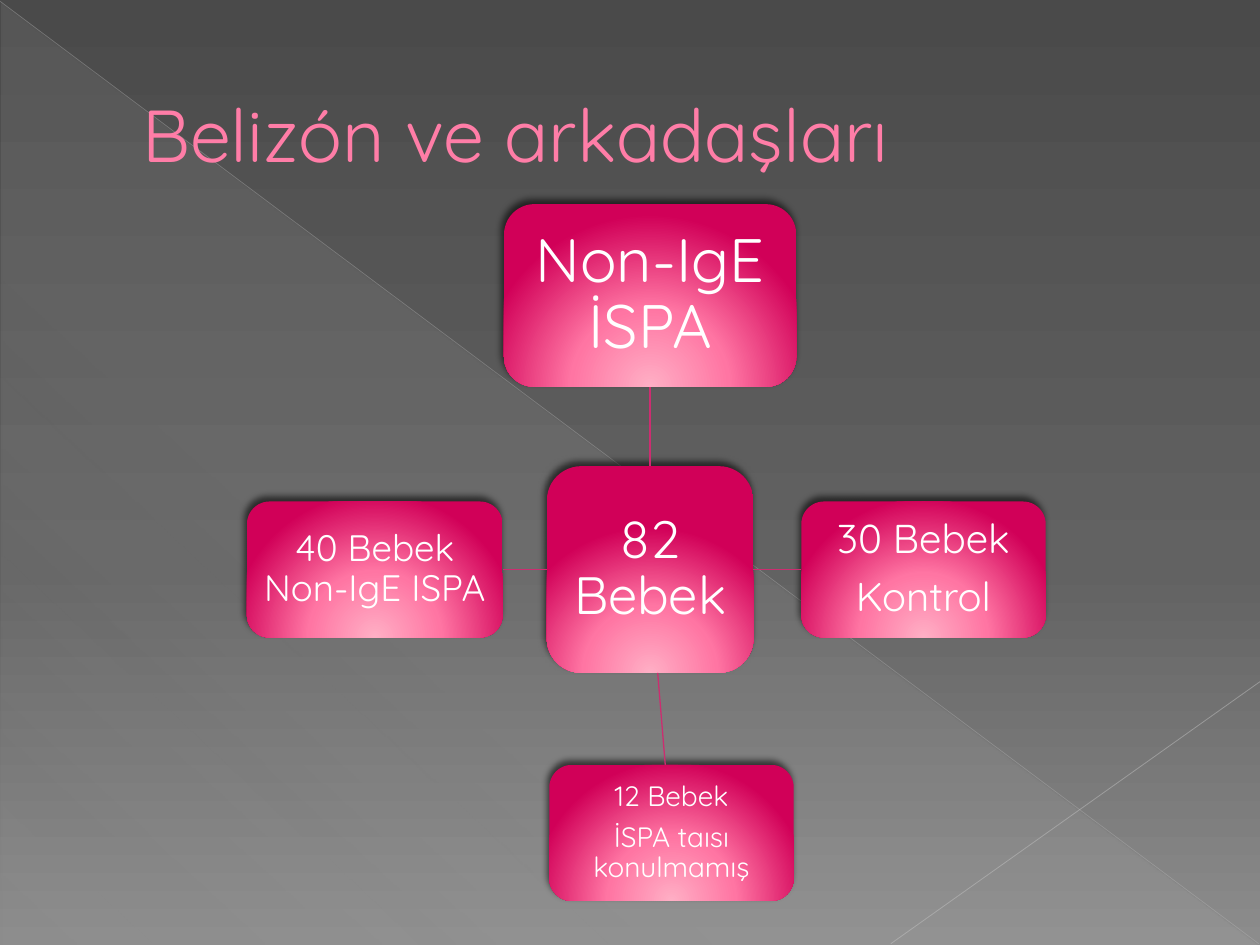
from lxml import etree
from pptx import Presentation
from pptx.dml.color import RGBColor
from pptx.enum.shapes import MSO_CONNECTOR, MSO_SHAPE
from pptx.enum.text import MSO_ANCHOR, PP_ALIGN
from pptx.oxml import parse_xml
from pptx.oxml.ns import nsdecls, qn
from pptx.util import Inches, Pt

STRAIGHT = MSO_CONNECTOR.STRAIGHT
ROUNDED, TRIANGLE = MSO_SHAPE.ROUNDED_RECTANGLE, MSO_SHAPE.RIGHT_TRIANGLE
CENTER, LEFT_ALIGN, MIDDLE = PP_ALIGN.CENTER, PP_ALIGN.LEFT, MSO_ANCHOR.MIDDLE
TOP, LEFT, BOTTOM, RIGHT = range(4)

FONT = "Quicksand"
TITLE = "Belizón ve arkadaşları"
LINE_COLOR = "CC2D70"

# Gradient stops: position %, colour, opacity %
BACKGROUND = [(0, "4A4A4A", 100), (60, "626262", 100), (100, "8C8C8C", 100)]
SHEEN = [(0, "D2D2D2", 10), (70, "D2D2D2", 8), (100, "D2D2D2", 1)]
PINK = [(0, "FFAFC5", 100), (46, "FF75A3", 100), (100, "D10058", 100)]
GLOW = ('<a:path path="circle"><a:fillToRect l="50000" t="155000" '
        'r="50000" b="-55000"/></a:path>')

# Decorative lines: from, to, colour, width, opacity %
DECOR_LINES = [
    ((0, 0.01), (9.99, 7.49), "BFBFBF", 0.39, 35),
    ((10, 5.41), (7.07, 7.49), "C6C6C6", 0.47, 45),
]

# Boxes: left, top, width, height, paragraphs, text size, inset
BOXES = {
    "hub": (4.34, 3.7, 1.64, 1.64, ["82 Bebek"], 30, 0.08),
    "top": (4, 1.62, 2.32, 1.45, ["Non-IgE İSPA"], 35, 0.1),
    "right": (6.36, 3.98, 1.94, 1.08, ["30 Bebek", "Kontrol"], 23, 0.06),
    "bottom": (4.36, 6.07, 1.94, 1.08, ["12 Bebek", "İSPA taısı konulmamış"], 16, 0.04),
    "left": (1.96, 3.98, 2.03, 1.08, ["40 Bebek Non-IgE ISPA"], 21, 0.06),
}
# Hub side, outer box, side of the outer box
SPOKES = [(TOP, "top", BOTTOM), (RIGHT, "right", LEFT), (LEFT, "left", RIGHT)]
BOTTOM_SPOKE = ((5.22, 5.34), (5.28, 6.07))


def rgb(color):
    return RGBColor.from_string(color)


def set_gradient(fill, properties, stops, direction):
    """Fill with a gradient; direction is an angle in degrees or a path element."""
    fill.solid()
    if not isinstance(direction, str):
        direction = f'<a:lin ang="{direction * 60000}" scaled="0"/>'
    stop_xml = "".join(
        f'<a:gs pos="{position * 1000}"><a:srgbClr val="{color}">'
        f'<a:alpha val="{opacity * 1000}"/></a:srgbClr></a:gs>'
        for position, color, opacity in stops)
    gradient = parse_xml(f'<a:gradFill {nsdecls("a")} rotWithShape="1">'
                         f'<a:gsLst>{stop_xml}</a:gsLst>{direction}</a:gradFill>')
    properties.replace(properties.find(qn("a:solidFill")), gradient)


def add_shape(page, kind, at, stops, direction):
    shape = page.shapes.add_shape(kind, *map(Inches, at))
    shape.shadow.inherit = False
    shape.line.fill.background()
    set_gradient(shape.fill, shape._element.spPr, stops, direction)
    return shape


def add_line(page, start, end, color=LINE_COLOR, width=0.75, opacity=100):
    line = page.shapes.add_connector(STRAIGHT, *map(Inches, (*start, *end)))
    line.line.color.rgb = rgb(color)
    line.line.width = Pt(width)
    properties = line._element.spPr
    tint = properties.find(".//" + qn("a:srgbClr"))
    etree.SubElement(tint, qn("a:alpha")).set("val", str(opacity * 1000))
    etree.SubElement(properties, qn("a:effectLst"))
    return line


def write(para, text, size, color, align):
    para.alignment = align
    span = para.add_run()
    span.text = text
    span.font.name = FONT
    span.font.size = Pt(size)
    span.font.color.rgb = rgb(color)
    return span


def add_box(page, left, top, width, height, lines, size, inset):
    box = add_shape(page, ROUNDED, (left, top, width, height), PINK, GLOW)
    box._element.spPr.find(qn("a:effectLst")).append(parse_xml(
        f'<a:outerShdw {nsdecls("a")} blurRad="{Pt(4)}" dist="{Pt(3)}" '
        f'dir="{245 * 60000}" rotWithShape="0"><a:srgbClr val="000000">'
        '<a:alpha val="60000"/></a:srgbClr></a:outerShdw>'))
    frame = box.text_frame
    frame.word_wrap = True
    frame.vertical_anchor = MIDDLE
    frame.margin_left = frame.margin_right = Inches(inset)
    frame.margin_top = frame.margin_bottom = Inches(inset)
    for index, text in enumerate(lines):
        para = frame.add_paragraph() if index else frame.paragraphs[0]
        para.line_spacing = 0.9
        para.space_after = Pt(round(size * 0.35))
        write(para, text, size, "FFFFFF", CENTER)
    return box


def set_title(page):
    title = page.shapes.title
    title.left, title.top, title.width, title.height = map(Inches, (0.5, 0.29, 9, 1.53))
    title.text_frame.vertical_anchor = MIDDLE
    para = title.text_frame.paragraphs[0]
    span = write(para, TITLE, 42, "FF7DA7", LEFT_ALIGN)
    para._p.get_or_add_pPr().set("marL", str(Inches(0.53)))
    span.font._element.insert(0, parse_xml(
        f'<a:ln {nsdecls("a")} w="{Pt(0.5)}"><a:solidFill>'
        '<a:srgbClr val="B12761"/></a:solidFill></a:ln>'))
    page.shapes._spTree.append(title._element)  # in front of the decoration


def main():
    deck = Presentation()
    deck.slide_width, deck.slide_height = Inches(10), Inches(7.5)
    page = deck.slides.add_slide(deck.slide_layouts[5])
    background = page.background.fill
    background.solid()
    set_gradient(background, page._element.find(".//" + qn("p:bgPr")), BACKGROUND, 90)

    add_shape(page, TRIANGLE, (0.01, 0.02, 9.98, 7.48), SHEEN, 133)
    for decor in DECOR_LINES:
        add_line(page, *decor)
    set_title(page)

    boxes = {name: add_box(page, *box) for name, box in BOXES.items()}
    for hub_side, name, box_side in SPOKES:
        spoke = add_line(page, (0, 0), (0, 0))
        spoke.begin_connect(boxes["hub"], hub_side)
        spoke.end_connect(boxes[name], box_side)
    add_line(page, *BOTTOM_SPOKE)
    deck.save("out.pptx")


if __name__ == "__main__":
    main()
